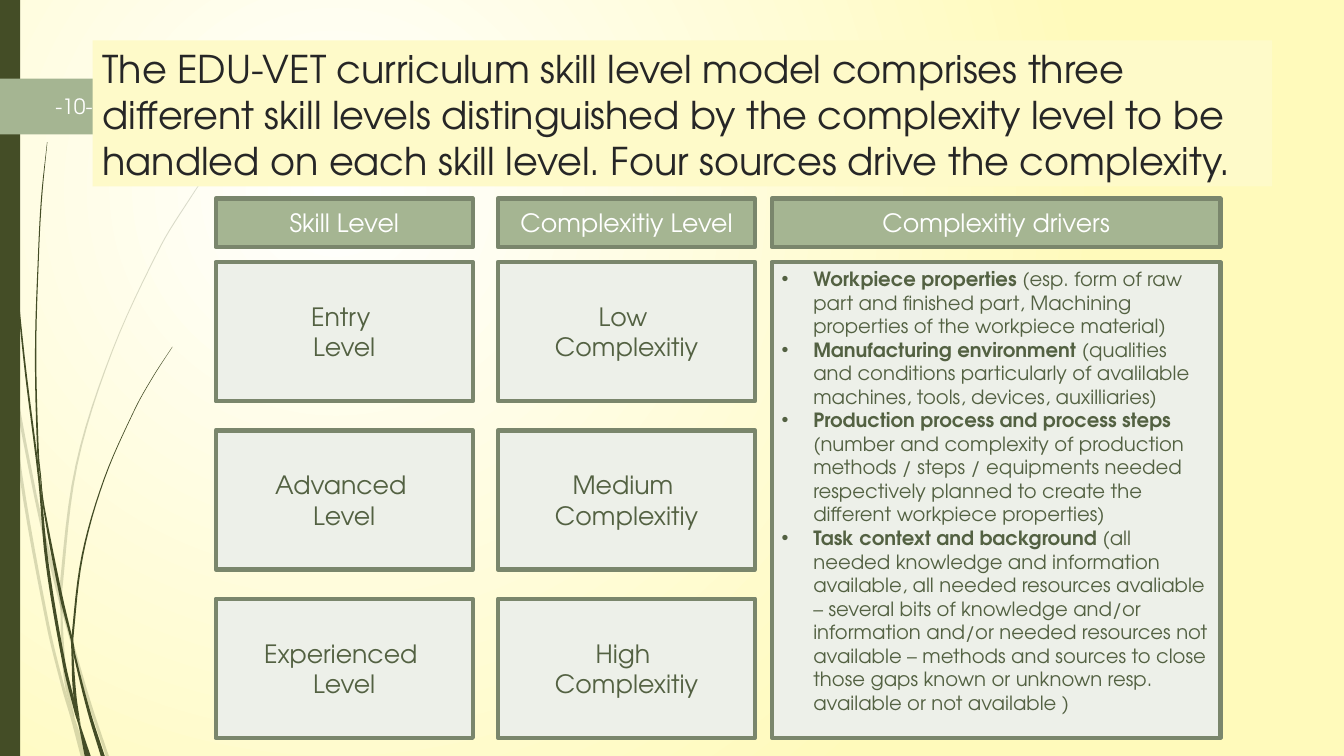
"""Build the skill level model slide: levels, complexity and its drivers."""
import dataclasses
import typing

import lxml.etree
import pptx
import pptx.dml.color
import pptx.enum.shapes
import pptx.enum.text
import pptx.oxml.ns
import pptx.util

RGB = pptx.dml.color.RGBColor
SHAPE = pptx.enum.shapes.MSO_SHAPE
ALIGN = pptx.enum.text.PP_ALIGN
ANCHOR = pptx.enum.text.MSO_ANCHOR
qn = pptx.oxml.ns.qn

FONT = "TeX Gyre Adventor"
PX_PER_INCH = 300
WHITE = RGB(0xFF, 0xFF, 0xFF)
BUTTER = RGB(0xFF, 0xFA, 0xBB)
CREAM = RGB(0xFE, 0xFA, 0xC9)
INK = RGB(0x26, 0x26, 0x26)
MOSS = RGB(0x44, 0x4D, 0x26)
SAGE = RGB(0xA5, 0xB5, 0x92)
SAGE_EDGE = RGB(0x7A, 0x86, 0x6C)
MIST = RGB(0xED, 0xF0, 0xE9)
LEAF = RGB(0x53, 0x61, 0x42)


class Box(typing.NamedTuple):
    x: int
    y: int
    width: int
    height: int


class Edge(typing.NamedTuple):
    left: int
    right: int
    y: int


@dataclasses.dataclass(frozen=True)
class Blade:
    edges: list[Edge]
    opacity: int


@dataclasses.dataclass(frozen=True)
class Panel:
    box: Box
    lines: list[str]
    fill: RGB
    ink: RGB


class Driver(typing.NamedTuple):
    name: str
    detail: str


def blade(opacity: int, *rows: tuple[int, int, int]) -> Blade:
    return Blade([Edge(*row) for row in rows], opacity)


BLADES = [
    blade(20, (30, 30, 1035), (36, 45, 1128), (66, 75, 1299), (120, 129, 1563), (174, 186, 1785),
          (186, 195, 1827), (258, 267, 2079), (315, 324, 2250)),
    blade(20, (0, 0, 846), (0, 6, 888), (9, 18, 966), (21, 27, 1050), (30, 36, 1128),
          (57, 66, 1410), (138, 147, 1860), (186, 195, 2055), (210, 222, 2136), (240, 261, 2250)),
    blade(20, (654, 654, 459), (564, 567, 591), (477, 480, 732), (333, 336, 1044),
          (225, 231, 1383), (177, 186, 1752), (180, 186, 1824), (183, 192, 1938),
          (195, 205, 2049), (220, 222, 2133)),
    blade(100, (9, 10, 0), (9, 12, 144), (15, 18, 330), (36, 39, 699), (69, 74, 1065),
          (114, 120, 1431), (135, 144, 1671), (186, 195, 1974), (222, 231, 2121),
          (234, 240, 2160), (252, 270, 2250)),
    blade(100, (120, 120, 1416), (129, 134, 1515), (177, 186, 1773), (213, 219, 1914),
          (219, 225, 1950), (261, 270, 2121), (300, 312, 2250)),
    blade(100, (140, 141, 423), (123, 126, 579), (114, 117, 735), (104, 108, 1047),
          (111, 116, 1353), (120, 123, 1425), (129, 129, 1515)),
    blade(100, (513, 514, 1032), (456, 458, 1119), (402, 404, 1215), (309, 312, 1425),
          (243, 248, 1653), (213, 219, 1896), (213, 219, 1950), (219, 228, 2073),
          (240, 240, 2157)),
]

HEADER_Y, HEADER_HEIGHT = 591, 144
LEVEL_X, COMPLEXITY_X, DRIVERS_X = 642, 1482, 2297
COLUMN_WIDTH, DRIVERS_WIDTH = 765, 1335
ROW_Y, ROW_STEP, ROW_HEIGHT = 780, 501, 414
HEADERS = [
    (LEVEL_X, COLUMN_WIDTH, "Skill Level"),
    (COMPLEXITY_X, COLUMN_WIDTH, "Complexitiy Level"),
    (DRIVERS_X, DRIVERS_WIDTH, "Complexitiy drivers"),
]
LEVELS = [("Entry ", "Low "), ("Advanced ", "Medium "), ("Experienced ", "High ")]
DRIVERS = [
    Driver("Workpiece properties ", "(esp. form of raw part and finished part, Machining "
           "properties of the workpiece material)"),
    Driver("Manufacturing environment ", "(qualities and conditions particularly of avalilable "
           "machines, tools, devices, auxilliaries)"),
    Driver("Production process and process steps", " (number and complexity of production "
           "methods / steps / equipments needed respectively planned to create the different "
           "workpiece properties)"),
    Driver("Task context and background ", "(all needed knowledge and information available, "
           "all needed resources avaliable – several bits of knowledge and/or information "
           "and/or needed resources not available – methods and sources to close those gaps "
           "known or unknown resp. available or not available )"),
]
TITLE = ("The EDU-VET curriculum skill level model comprises three different skill levels "
         "distinguished by the complexity level to be handled on each skill level. "
         "Four sources drive the complexity.")


def px(length: float) -> int:
    return round(length * pptx.util.Inches(1) / PX_PER_INCH)


def apply_format(target: typing.Any, values: dict[str, typing.Any]) -> None:
    for attribute, value in values.items():
        setattr(target, attribute, value)


def add_text(paragraph: typing.Any, text: str, size: float, ink: RGB, bold: bool = False) -> None:
    run = paragraph.add_run()
    run.text = text
    apply_format(run.font, {"name": FONT, "size": pptx.util.Pt(size), "bold": bold})
    run.font.color.rgb = ink


def add_block(slide: typing.Any, box: Box, fill: RGB, edge: RGB | None = None,
              preset: SHAPE = SHAPE.RECTANGLE) -> typing.Any:
    block = slide.shapes.add_shape(preset, *map(px, box))
    block.shadow.inherit = False
    block.fill.solid()
    block.fill.fore_color.rgb = fill
    if edge is None:
        block.line.fill.background()
    else:
        block.line.color.rgb = edge
        block.line.width = pptx.util.Pt(3.15)
        lxml.etree.SubElement(block.element.spPr.find(qn("a:ln")), qn("a:round"))
    apply_format(block.text_frame, {"word_wrap": True, "vertical_anchor": ANCHOR.TOP})
    block.text_frame.paragraphs[0].alignment = ALIGN.LEFT
    return block


def smooth(points: list[tuple[int, int]], steps: int = 6) -> list[tuple[int, int]]:
    ends = [points[0], *points, points[-1]]
    slopes = [(after[0] - before[0]) / (after[1] - before[1])
              for before, after in zip(ends, ends[2:])]
    curve = []
    for i, ((x0, y0), (x1, y1)) in enumerate(zip(points, points[1:])):
        span = y1 - y0
        for step in range(steps):
            t = step / steps
            x = (x0 * (1 + 2 * t) * (1 - t) ** 2 + x1 * t * t * (3 - 2 * t)
                 + span * t * (1 - t) * (slopes[i] * (1 - t) - slopes[i + 1] * t))
            curve.append((px(x), px(y0 + span * t)))
    return curve + [(px(points[-1][0]), px(points[-1][1]))]


def add_blade(slide: typing.Any, grass: Blade) -> None:
    left = smooth([(edge.left, edge.y) for edge in grass.edges])
    right = smooth([(edge.right, edge.y) for edge in grass.edges])
    outline = left + right[::-1]
    builder = slide.shapes.build_freeform(*outline[0])
    builder.add_line_segments(outline[1:], close=True)
    leaf = builder.convert_to_shape()
    leaf.shadow.inherit = False
    leaf.fill.solid()
    leaf.fill.fore_color.rgb = MOSS
    leaf.line.fill.background()
    if grass.opacity < 100:
        colour = leaf.element.spPr.find(qn("a:solidFill")).find(qn("a:srgbClr"))
        lxml.etree.SubElement(colour, qn("a:alpha"), val=str(grass.opacity * 1000))


def add_panel(slide: typing.Any, panel: Panel) -> None:
    frame = add_block(slide, panel.box, panel.fill, SAGE_EDGE).text_frame
    frame.vertical_anchor = ANCHOR.MIDDLE
    for i, line in enumerate(panel.lines):
        paragraph = frame.add_paragraph() if i else frame.paragraphs[0]
        paragraph.alignment = ALIGN.CENTER
        add_text(paragraph, line, 18, panel.ink)


def add_drivers(slide: typing.Any, box: Box) -> None:
    frame = add_block(slide, box, MIST, SAGE_EDGE).text_frame
    for i, driver in enumerate(DRIVERS):
        paragraph = frame.add_paragraph() if i else frame.paragraphs[0]
        paragraph.alignment = ALIGN.LEFT
        properties = paragraph._p.get_or_add_pPr()
        properties.set("marL", str(px(94)))
        properties.set("indent", str(px(-94)))
        lxml.etree.SubElement(properties, qn("a:buFont"), typeface="Arial")
        lxml.etree.SubElement(properties, qn("a:buChar"), char="•")
        add_text(paragraph, driver.name, 14, LEAF, bold=True)
        add_text(paragraph, driver.detail, 14, LEAF)


def paint_background(slide: typing.Any) -> None:
    fill = slide.background.fill
    fill.gradient()
    for stop, colour in zip(fill.gradient_stops, (WHITE, BUTTER)):
        stop.color.rgb = colour
    gradient = slide.element.find(".//" + qn("a:gradFill"))
    gradient.remove(gradient.find(qn("a:lin")))
    circle = lxml.etree.SubElement(gradient, qn("a:path"), path="circle")
    lxml.etree.SubElement(circle, qn("a:fillToRect"), l="50000", t="50000", r="100000", b="100000")


def main() -> None:
    deck = pptx.Presentation()
    apply_format(deck, {"slide_width": px(4000), "slide_height": px(2250)})
    slide = deck.slides.add_slide(deck.slide_layouts[6])
    paint_background(slide)
    for grass in BLADES:
        add_blade(slide, grass)
    add_block(slide, Box(0, 0, 60, 2250), MOSS)
    page_tag = add_block(slide, Box(0, 234, 522, 166), SAGE, preset=SHAPE.PENTAGON)
    page_tag.adjustments[0] = 0.47
    page_number = slide.shapes.add_textbox(*map(px, Box(135, 264, 246, 105)))
    page_number.text_frame.word_wrap = True
    add_text(page_number.text_frame.paragraphs[0], "-10-", 15, WHITE)
    title = add_block(slide, Box(276, 120, 3510, 435), CREAM)
    add_text(title.text_frame.paragraphs[0], TITLE, 27.3, INK)

    for x, width, heading in HEADERS:
        add_panel(slide, Panel(Box(x, HEADER_Y, width, HEADER_HEIGHT), [heading], SAGE, WHITE))
    for i, (level, complexity) in enumerate(LEVELS):
        for x, lines in ((LEVEL_X, [level, "Level"]), (COMPLEXITY_X, [complexity, "Complexitiy"])):
            box = Box(x, ROW_Y + i * ROW_STEP, COLUMN_WIDTH, ROW_HEIGHT)
            add_panel(slide, Panel(box, lines, MIST, LEAF))
    drivers_height = (len(LEVELS) - 1) * ROW_STEP + ROW_HEIGHT
    add_drivers(slide, Box(DRIVERS_X, ROW_Y, DRIVERS_WIDTH, drivers_height))
    deck.save("out.pptx")


if __name__ == "__main__":
    main()
